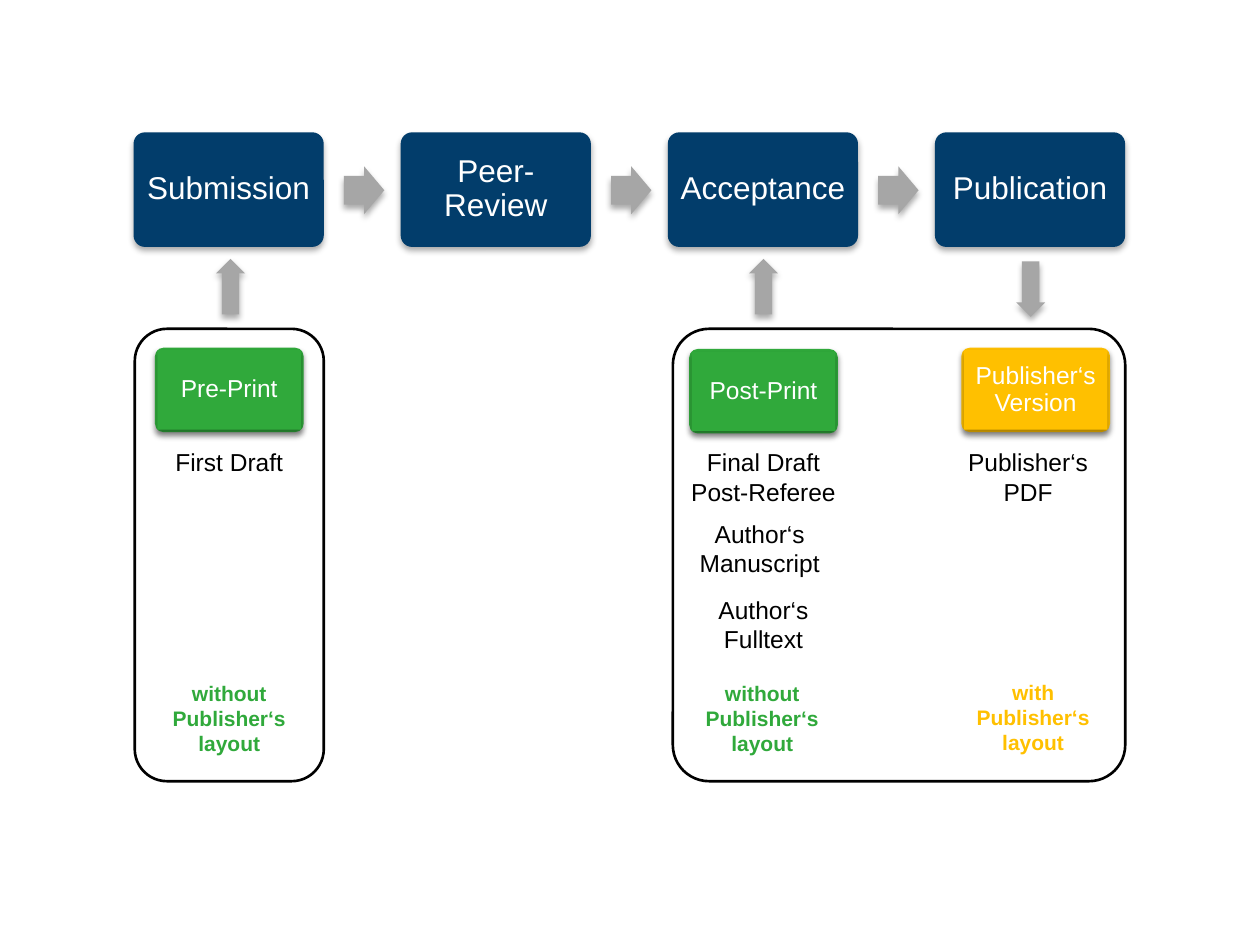
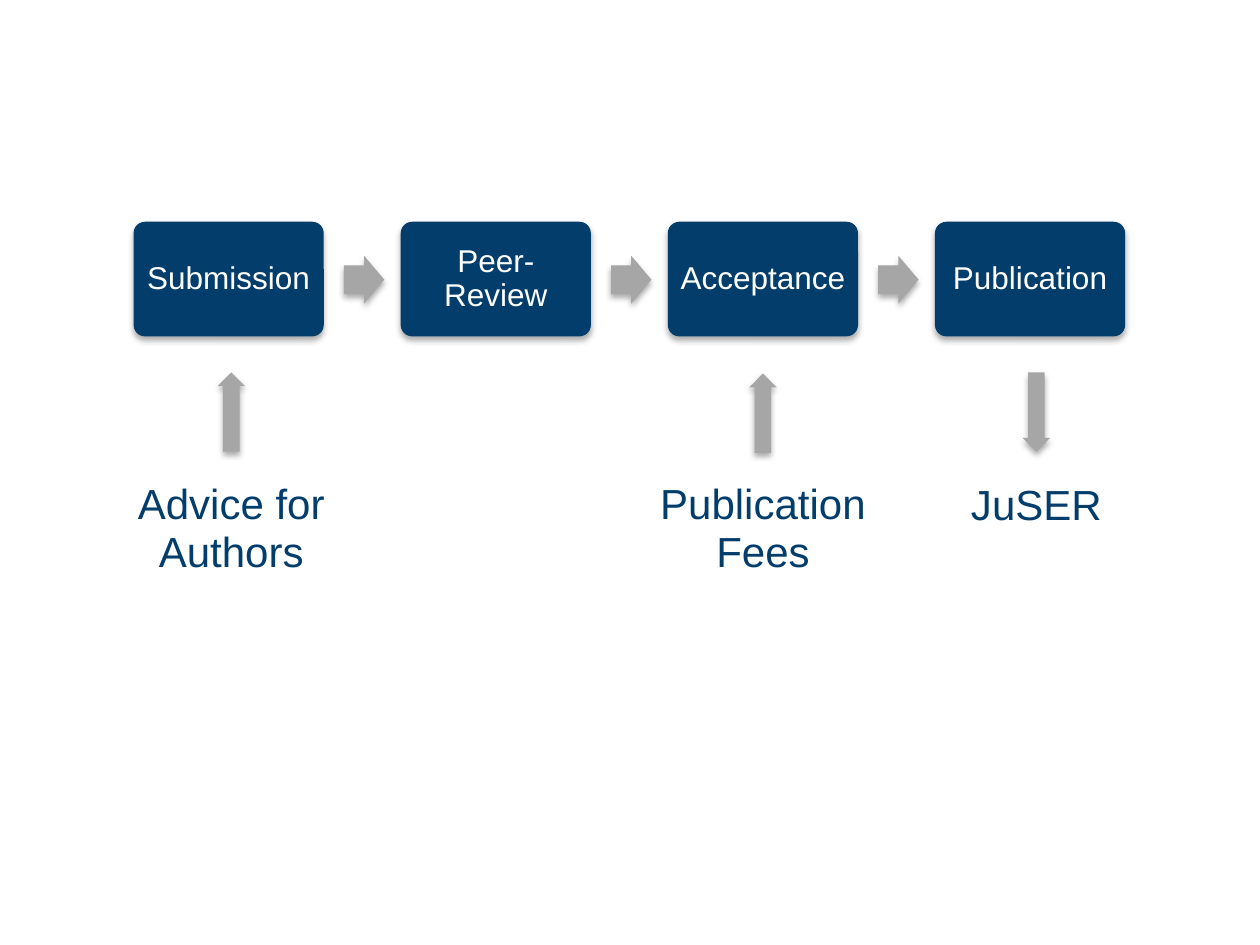
from dataclasses import dataclass

from lxml import etree
from pptx import Presentation
from pptx.dml.color import RGBColor
from pptx.enum.shapes import MSO_SHAPE
from pptx.enum.text import MSO_ANCHOR, MSO_AUTO_SIZE, PP_ALIGN
from pptx.oxml.ns import qn
from pptx.shapes.autoshape import Shape
from pptx.slide import Slide
from pptx.util import Inches, Pt

ROUND = MSO_SHAPE.ROUNDED_RECTANGLE
RECT = MSO_SHAPE.RECTANGLE
ARROW = MSO_SHAPE.RIGHT_ARROW
MIDDLE = MSO_ANCHOR.MIDDLE
CENTER = PP_ALIGN.CENTER
GROW = MSO_AUTO_SIZE.SHAPE_TO_FIT_TEXT

NAVY = "023D6B"
GREEN = "30A93B"
GOLD = "FFC000"
GREY = "A6A6A6"
BLACK = "000000"
WHITE = "FFFFFF"

STEPS = ("Submission", "Peer-Review", "Acceptance", "Publication")
STEP_LEFT = 1.06
STEP_PITCH = 2.12
UP, DOWN = 270, 90


@dataclass(frozen=True)
class Area:
    left: float
    top: float
    width: float
    height: float

    def lengths(self) -> list[Inches]:
        return [Inches(n) for n in (self.left, self.top, self.width, self.height)]


@dataclass(frozen=True)
class Label:
    text: str
    area: Area
    size: int = 14
    color: str = BLACK
    bold: bool = False
    spacing: float = 1.0


@dataclass(frozen=True)
class Card:
    text: str
    left: float
    top: float
    color: str


@dataclass(frozen=True)
class Frame:
    area: Area
    corner: float


@dataclass(frozen=True)
class Pointer:
    area: Area
    turn: int


def rgb(color: str) -> RGBColor:
    return RGBColor.from_string(color)


def apply(target: object, values: dict) -> None:
    for name, value in values.items():
        setattr(target, name, value)


def write(shape: Shape, text: str, size: int, color: str, spacing: float,
          bold: bool = False) -> None:
    shape.text_frame.word_wrap = True
    para = shape.text_frame.paragraphs[0]
    para.text = text
    apply(para, {"alignment": CENTER, "line_spacing": spacing})
    font = para.runs[0].font
    apply(font, {"name": "Arial", "size": Pt(size), "bold": bold})
    font.color.rgb = rgb(color)


def shade(shape: Shape) -> None:
    effects = shape._element.spPr.find(qn("a:effectLst"))
    shadow = etree.SubElement(effects, qn("a:outerShdw"), {
        "blurRad": str(Pt(3.5)), "dist": str(Pt(2.2)),
        "dir": "5400000", "rotWithShape": "0"})
    tint = etree.SubElement(shadow, qn("a:srgbClr"), val=BLACK)
    etree.SubElement(tint, qn("a:alpha"), val="32000")


def draw_solid(slide: Slide, kind: MSO_SHAPE, area: Area, color: str,
               adjust: tuple[float, ...] = ()) -> Shape:
    shape = slide.shapes.add_shape(kind, *area.lengths())
    shape.shadow.inherit = False
    shape.fill.solid()
    shape.fill.fore_color.rgb = rgb(color)
    shape.line.fill.background()
    for i, value in enumerate(adjust):
        shape.adjustments[i] = value
    shade(shape)
    return shape


def set_inset(shape: Shape, inset: float) -> None:
    sides = ("left", "top", "right", "bottom")
    values = {f"margin_{side}": Inches(inset) for side in sides}
    apply(shape.text_frame, values | {"vertical_anchor": MIDDLE})


def draw_arrow(slide: Slide, area: Area, turn: int = 0) -> None:
    draw_solid(slide, ARROW, area, GREY, (0.6, 0.5)).rotation = turn


def draw_steps(slide: Slide, top: float) -> None:
    for i, text in enumerate(STEPS):
        left = STEP_LEFT + i * STEP_PITCH
        step = draw_solid(slide, ROUND, Area(left, top, 1.51, 0.91), NAVY, (0.1,))
        set_inset(step, 0.05)
        write(step, text, 18, WHITE, 0.9)
        if i < len(STEPS) - 1:
            draw_arrow(slide, Area(left + 1.67, top + 0.27, 0.32, 0.38))


def draw_card(slide: Slide, card: Card) -> None:
    outer = Area(card.left, card.top, 1.18, 0.67)
    inner = Area(card.left + 0.02, card.top + 0.02, 1.14, 0.63)
    draw_solid(slide, ROUND, outer, card.color, (0.1,))
    face = draw_solid(slide, RECT, inner, card.color)
    set_inset(face, 0.06)
    write(face, card.text, 14, WHITE, 0.9)


def draw_frame(slide: Slide, frame: Frame) -> None:
    shape = slide.shapes.add_shape(ROUND, *frame.area.lengths())
    shape.shadow.inherit = False
    shape.fill.background()
    shape.line.color.rgb = rgb(BLACK)
    shape.line.width = Pt(1.5)
    shape.adjustments[0] = frame.corner


def draw_label(slide: Slide, label: Label) -> None:
    box = slide.shapes.add_textbox(*label.area.lengths())
    write(box, label.text, label.size, label.color, label.spacing, label.bold)
    box.text_frame.auto_size = GROW


def note(text: str, left: float, top: float, color: str) -> Label:
    return Label(text, Area(left, top, 1.14, 0.71), 12, color, True)


def service(text: str, left: float, top: float, height: float) -> Label:
    return Label(text, Area(left, top, 2.05, height), 24, NAVY, spacing=0.95)


FRAMES = (
    Frame(Area(1.07, 2.61, 1.5, 3.59), 0.17),
    Frame(Area(5.34, 2.61, 3.59, 3.59), 0.08),
)
CARDS = (
    Card("Pre-Print", 1.23, 2.76, GREEN),
    Card("Post-Print", 5.47, 2.77, GREEN),
    Card("Publisher‘s Version", 7.63, 2.76, GOLD),
)
VERSIONS = (
    Label("First Draft", Area(1.1, 3.5, 1.44, 0.34)),
    Label("Final Draft Post-Referee", Area(5.34, 3.5, 1.44, 0.57)),
    Label("Author‘s Manuscript", Area(5.31, 4.07, 1.44, 0.57)),
    Label("Author‘s Fulltext", Area(5.49, 4.67, 1.14, 0.57)),
    Label("Publisher‘s PDF", Area(7.44, 3.5, 1.44, 0.57)),
    note("without Publisher‘s layout", 1.25, 5.35, GREEN),
    note("without Publisher‘s layout", 5.48, 5.35, GREEN),
    note("with Publisher‘s layout", 7.63, 5.34, GOLD),
)
VERSION_ARROWS = (
    Pointer(Area(1.61, 2.16, 0.44, 0.23), UP),
    Pointer(Area(5.84, 2.16, 0.44, 0.23), UP),
    Pointer(Area(7.96, 2.18, 0.44, 0.23), DOWN),
)
SERVICES = (
    service("Advice for Authors", 0.81, 3.77, 0.87),
    service("Publication Fees", 5.03, 3.77, 0.87),
    service("JuSER", 7.2, 3.78, 0.48),
)
SERVICE_ARROWS = (
    Pointer(Area(1.52, 3.16, 0.63, 0.22), UP),
    Pointer(Area(5.74, 3.17, 0.63, 0.22), UP),
    Pointer(Area(7.91, 3.16, 0.63, 0.22), DOWN),
)


def build(deck: Presentation, top: float, arrows: tuple[Pointer, ...],
          labels: tuple[Label, ...], frames: tuple[Frame, ...] = (),
          cards: tuple[Card, ...] = ()) -> None:
    slide = deck.slides.add_slide(deck.slide_layouts[6])
    draw_steps(slide, top)
    for arrow in arrows:
        draw_arrow(slide, arrow.area, arrow.turn)
    for frame in frames:
        draw_frame(slide, frame)
    for card in cards:
        draw_card(slide, card)
    for label in labels:
        draw_label(slide, label)


def main() -> None:
    deck = Presentation()
    apply(deck, {"slide_width": Inches(10), "slide_height": Inches(7.5)})
    build(deck, 1.05, VERSION_ARROWS, VERSIONS, FRAMES, CARDS)
    build(deck, 1.76, SERVICE_ARROWS, SERVICES)
    deck.save("out.pptx")


if __name__ == "__main__":
    main()
